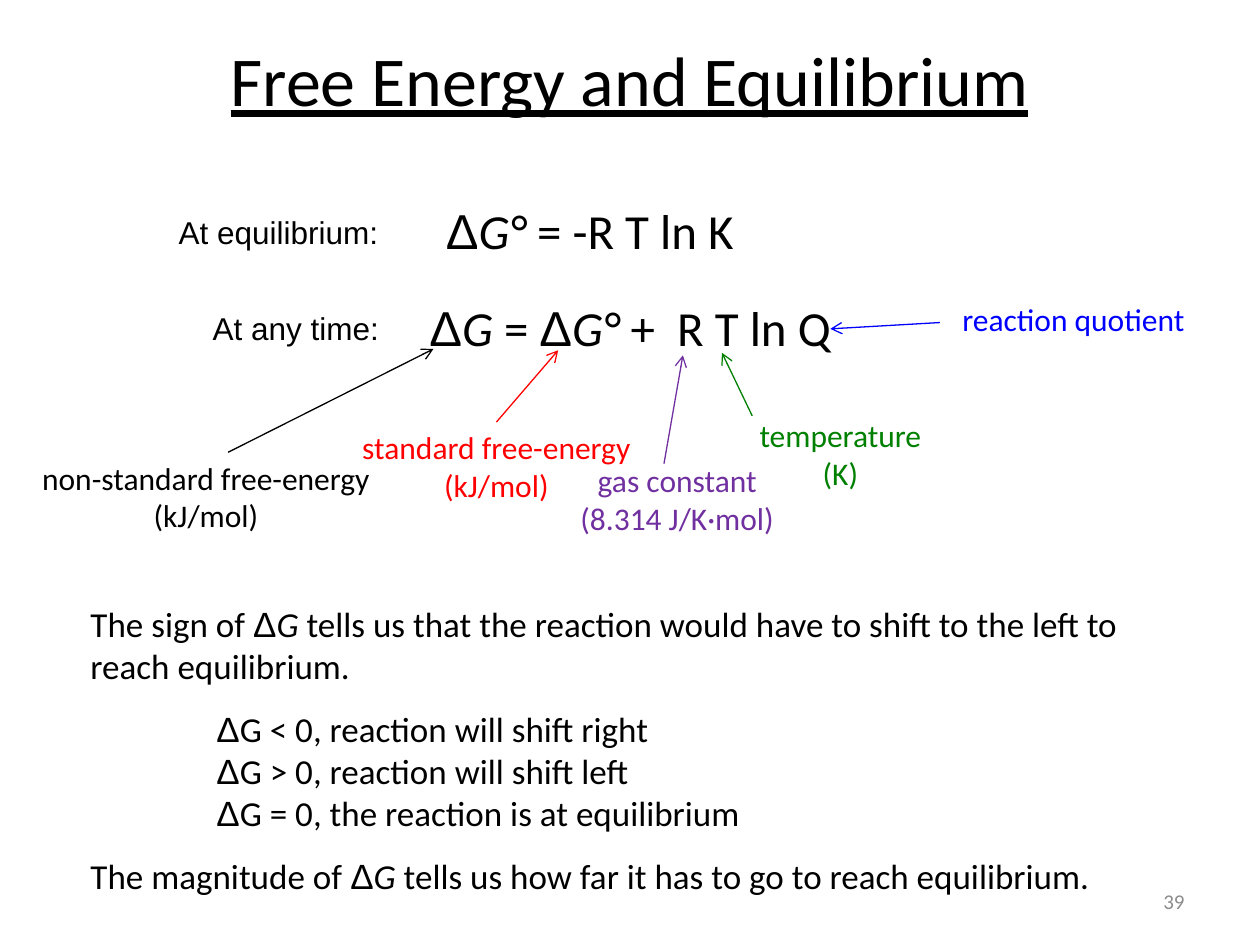
from dataclasses import dataclass

from lxml.etree import SubElement
from pptx import Presentation
from pptx.dml.color import RGBColor
from pptx.enum.shapes import MSO_CONNECTOR, MSO_SHAPE
from pptx.enum.text import MSO_ANCHOR, MSO_AUTO_SIZE, PP_ALIGN
from pptx.oxml.ns import qn
from pptx.util import Inches, Pt

BLACK = RGBColor(0x00, 0x00, 0x00)
WHITE = RGBColor(0xFF, 0xFF, 0xFF)
RED = RGBColor(0xFF, 0x00, 0x00)
PURPLE = RGBColor(0x70, 0x30, 0xA0)
GREEN = RGBColor(0x00, 0x80, 0x00)
BLUE = RGBColor(0x00, 0x00, 0xFF)
GRAY = RGBColor(0x8C, 0x8C, 0x8C)

LEFT, CENTER, RIGHT = PP_ALIGN.LEFT, PP_ALIGN.CENTER, PP_ALIGN.RIGHT
TOP, MIDDLE = MSO_ANCHOR.TOP, MSO_ANCHOR.MIDDLE


@dataclass(frozen=True)
class Line:
    """One paragraph; text between underscores is italic."""
    text: str
    space_after: float = 0
    indent: float = 0


@dataclass(frozen=True)
class Label:
    area: tuple[float, float, float, float]
    lines: tuple[Line, ...]
    size: float = 18
    color: RGBColor = BLACK
    font: str = "Calibri"
    align: PP_ALIGN = LEFT
    anchor: MSO_ANCHOR = TOP
    wrap: bool = False
    underline: bool = False
    fill: RGBColor | None = None


@dataclass(frozen=True)
class Arrow:
    start: tuple[float, float]
    end: tuple[float, float]
    color: RGBColor


def note(area: tuple[float, float, float, float], color: RGBColor, *texts: str) -> Label:
    """A centred explanation of one term of the equation."""
    return Label(area, tuple(map(Line, texts)), color=color, align=CENTER)


LABELS = (
    Label((1.27, 0, 7.45, 1.25), (Line("Free Energy and Equilibrium"),), size=40,
          align=CENTER, anchor=MIDDLE, wrap=True, underline=True),
    Label((1.32, 1.64, 1.8, 0.4), (Line("At equilibrium:"),), font="Arial"),
    Label((3.44, 1.54, 2.49, 0.57), (Line("Δ_G°_ = -R T ln K"),), size=28),
    Label((1.59, 2.4, 1.53, 0.4), (Line("At any time:"),), font="Arial"),
    Label((3.31, 2.31, 3.5, 0.57), (Line("Δ_G _= Δ_G°_ +  R T ln Q"),), size=28,
          wrap=True),
    note((0.22, 3.59, 2.83, 0.71), BLACK, "non-standard free-energy", "(kJ/mol)"),
    note((2.76, 3.35, 2.36, 0.71), RED, "standard free-energy", "(kJ/mol)"),
    note((4.49, 3.61, 1.77, 0.71), PURPLE, "gas constant", "(8.314 J/K·mol)"),
    note((5.91, 3.25, 1.52, 0.71), GREEN, "temperature", "(K)"),
    note((7.5, 2.33, 2.04, 0.4), BLUE, "reaction quotient"),
    Label((0.62, 4.72, 8.77, 2.46), (
        Line("The sign of Δ_G_ tells us that the reaction would have to shift "
             "to the left to reach equilibrium.", space_after=12),
        Line("ΔG < 0, reaction will shift right", indent=1),
        Line("ΔG > 0, reaction will shift left", indent=1),
        Line("ΔG = 0, the reaction is at equilibrium", space_after=12, indent=1),
        Line("The magnitude of Δ_G_ tells us how far it has to go to reach equilibrium."),
    ), size=20, anchor=MIDDLE, wrap=True, fill=WHITE),
    Label((7.17, 6.95, 2.33, 0.4), (Line("39"),), size=12, color=GRAY,
          align=RIGHT, anchor=MIDDLE, wrap=True),
)

ARROWS = (
    Arrow((1.81, 3.59), (3.44, 2.77), BLACK),
    Arrow((3.94, 3.35), (4.43, 2.78), RED),
    Arrow((5.27, 3.68), (5.42, 2.82), PURPLE),
    Arrow((5.97, 3.3), (5.73, 2.8), GREEN),
    Arrow((7.46, 2.56), (6.59, 2.61), BLUE),
)


def set_all(target, values: dict) -> None:
    for name, value in values.items():
        setattr(target, name, value)


def write_line(para, line: Line, label: Label) -> None:
    """Split the text into spans: Δ in Arial, underscored parts in italics."""
    set_all(para, {"alignment": label.align, "space_after": Pt(line.space_after)})
    if line.indent:
        para._p.get_or_add_pPr().set("marL", str(Inches(line.indent)))
    for index, piece in enumerate(line.text.split("_")):
        for text in filter(None, piece.partition("Δ")):
            span = para.add_run()
            span.text = text
            set_all(span.font, {
                "name": "Arial" if text == "Δ" else label.font,
                "size": Pt(label.size),
                "italic": index % 2 == 1,
                "underline": label.underline,
            })
            span.font.color.rgb = label.color


def draw_label(page, label: Label) -> None:
    area = map(Inches, label.area)
    if label.fill is None:
        box = page.shapes.add_textbox(*area)
    else:
        box = page.shapes.add_shape(MSO_SHAPE.RECTANGLE, *area)
        box.shadow.inherit = False
        box.fill.solid()
        box.fill.fore_color.rgb = label.fill
        box.line.fill.background()
    frame = box.text_frame
    fixed = label.wrap and label.fill is None
    set_all(frame, {
        "word_wrap": label.wrap,
        "vertical_anchor": label.anchor,
        "auto_size": MSO_AUTO_SIZE.NONE if fixed else MSO_AUTO_SIZE.SHAPE_TO_FIT_TEXT,
    })
    for index, line in enumerate(label.lines):
        para = frame.add_paragraph() if index else frame.paragraphs[0]
        write_line(para, line, label)


def draw_arrow(page, arrow: Arrow) -> None:
    ends = map(Inches, arrow.start + arrow.end)
    connector = page.shapes.add_connector(MSO_CONNECTOR.STRAIGHT, *ends)
    connector.line.width = Pt(0.75)
    connector.line.color.rgb = arrow.color
    SubElement(connector.line._get_or_add_ln(), qn("a:tailEnd"), type="arrow")
    SubElement(connector._element.spPr, qn("a:effectLst"))


def main() -> None:
    deck = Presentation()
    set_all(deck, {"slide_width": Inches(10), "slide_height": Inches(7.5)})
    page = deck.slides.add_slide(deck.slide_layouts[6])
    for label in LABELS:
        draw_label(page, label)
    for arrow in ARROWS:
        draw_arrow(page, arrow)
    deck.save("out.pptx")


if __name__ == "__main__":
    main()
